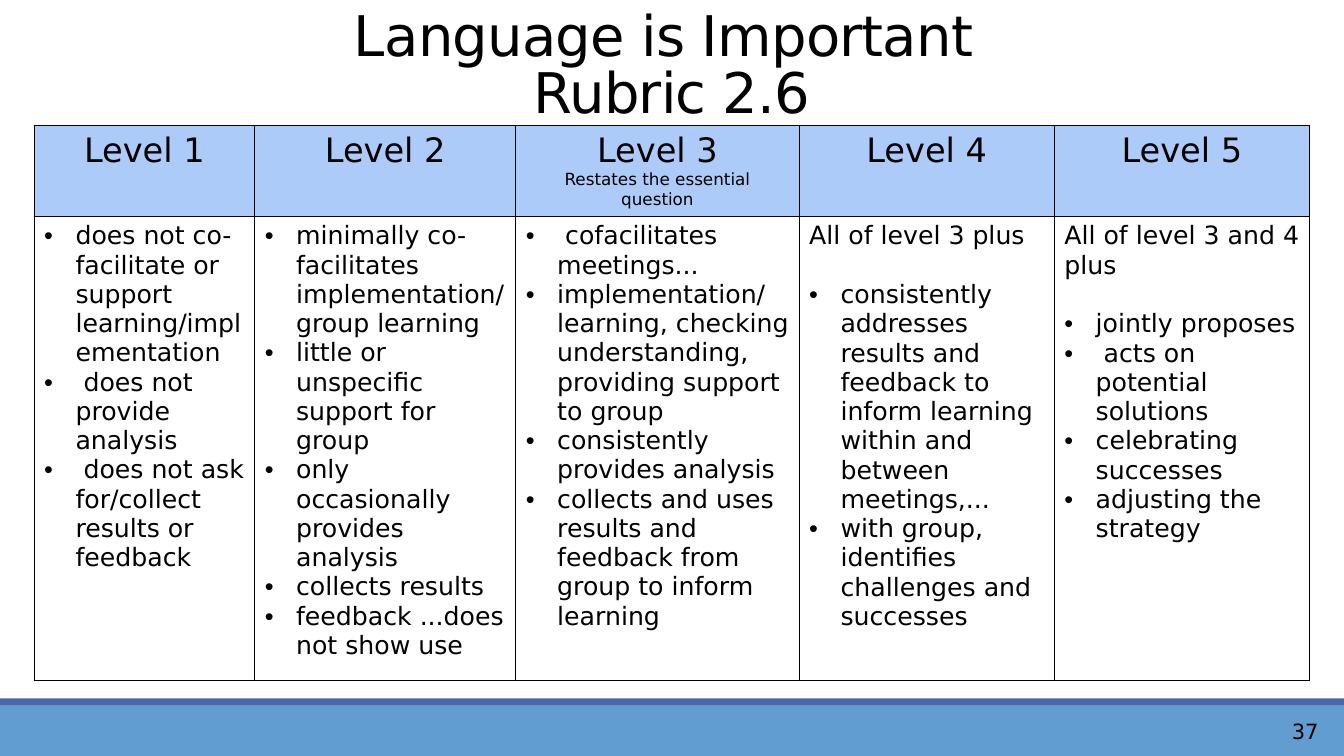
from lxml.etree import SubElement
from pptx import Presentation
from pptx.dml.color import RGBColor
from pptx.enum.shapes import MSO_SHAPE as Shape
from pptx.enum.text import MSO_ANCHOR as Anchor, MSO_AUTO_SIZE as AutoSize, PP_ALIGN as Align
from pptx.oxml.ns import qn
from pptx.util import Cm, Pt

FONT = "DejaVu Sans"
BLACK, HEADER_BLUE, SKY, NAVY = "000000", "ACCBF9", "629DD1", "4A66AC"
SLIDE_W, SLIDE_H = 33.87, 19.05
COLUMN_WIDTHS = [5.56, 6.58, 7.14, 6.43, 6.43]
ROW_HEIGHTS = [2.24, 11.3]

# Each level: heading, subheading, lead-in, bullet points
LEVELS = [
    ("Level 1", "", "", [
        "does not co-facilitate or support learning/implementation",
        " does not provide analysis",
        " does not ask for/collect results or feedback"]),
    ("Level 2", "", "", [
        "minimally co-facilitates implementation/group learning",
        "little or unspecific support for group",
        "only occasionally provides analysis",
        "collects results",
        "feedback ...does not show use"]),
    ("Level 3", "Restates the essential question", "", [
        " cofacilitates meetings...",
        "implementation/learning, checking understanding, providing support to group",
        "consistently provides analysis",
        "collects and uses results and feedback from group to inform learning"]),
    ("Level 4", "", "All of level 3 plus", [
        "consistently addresses results and feedback to inform learning "
        "within and between meetings,...",
        "with group, identifies challenges and successes"]),
    ("Level 5", "", "All of level 3 and 4 plus", [
        "jointly proposes",
        " acts on potential solutions",
        "celebrating successes",
        "adjusting the strategy"]),
]


def color(hex_code):
    return RGBColor.from_string(hex_code)


def write(frame, text, size=18, align=Align.LEFT, bullet=False, after=0,
          line=None, tracking=None):
    """Fill the frame's first paragraph, or add one if it is already used."""
    paragraph = frame.paragraphs[0]
    if paragraph.runs:
        paragraph = frame.add_paragraph()
    paragraph.text = text
    paragraph.alignment = align
    paragraph.space_before, paragraph.space_after = Pt(0), Pt(after)
    if line:
        paragraph.line_spacing = line
    for run in paragraph.runs:
        font = run.font
        font.name, font.size, font.bold = FONT, Pt(size), False
        font.color.rgb = color(BLACK)
        if tracking is not None:
            run._r.get_or_add_rPr().set("spc", str(round(tracking * 100)))
    for line_break in paragraph._p.findall(qn("a:br")):
        SubElement(line_break, qn("a:rPr"), sz=str(size * 100))
    if bullet:
        props = paragraph._p.get_or_add_pPr()
        props.set("marL", str(Cm(0.79)))
        props.set("indent", str(-Cm(0.79)))
        SubElement(props, qn("a:buFont"), typeface="Arial")
        SubElement(props, qn("a:buChar"), char="•")


def outline_cell(cell):
    props = cell._tc.get_or_add_tcPr()
    for index, side in enumerate(("lnL", "lnR", "lnT", "lnB")):
        border = props.makeelement(qn(f"a:{side}"), {"w": str(Pt(1))})
        props.insert(index, border)
        fill = SubElement(border, qn("a:solidFill"))
        SubElement(fill, qn("a:srgbClr"), val=BLACK)


def add_bar(slide, left, top, width, height, fill):
    bar = slide.shapes.add_shape(Shape.RECTANGLE, Cm(left), Cm(top), Cm(width), Cm(height))
    bar.shadow.inherit = False
    bar.fill.solid()
    bar.fill.fore_color.rgb = color(fill)
    bar.line.fill.background()


def add_footer(slide, left, top, width, height):
    stripe = 0.18
    add_bar(slide, left, top + stripe, width, height - stripe, SKY)
    add_bar(slide, left, top, width, stripe, NAVY)
    # Slide number
    number = slide.shapes.add_textbox(Cm(left + width - 2.22), Cm(top + 0.26),
                                      Cm(1.83), Cm(1.12)).text_frame
    number.word_wrap = True
    number.vertical_anchor = Anchor.MIDDLE
    write(number, "37", size=15, align=Align.RIGHT)


def add_title(slide, left, top, width, height):
    title = slide.shapes.title
    title.left, title.top, title.width, title.height = map(Cm, (left, top, width, height))
    frame = title.text_frame
    frame.word_wrap = True
    frame.auto_size = AutoSize.NONE
    frame.vertical_anchor = Anchor.BOTTOM
    write(frame, "Language is Important \vRubric 2.6", size=40, align=Align.CENTER,
          line=0.85, tracking=-0.5)


def add_rubric(slide, left, top):
    rubric = slide.shapes.add_table(len(ROW_HEIGHTS), len(LEVELS), Cm(left), Cm(top),
                                    Cm(sum(COLUMN_WIDTHS)), Cm(sum(ROW_HEIGHTS))).table
    rubric.first_row = rubric.horz_banding = False
    for row, height in zip(rubric.rows, ROW_HEIGHTS):
        row.height = Cm(height)
    for index, (heading, subheading, lead_in, points) in enumerate(LEVELS):
        rubric.columns[index].width = Cm(COLUMN_WIDTHS[index])
        header, body = rubric.cell(0, index), rubric.cell(1, index)
        # Level heading
        header.fill.solid()
        header.fill.fore_color.rgb = color(HEADER_BLUE)
        write(header.text_frame, heading, size=24, align=Align.CENTER)
        if subheading:
            write(header.text_frame, subheading, size=12, align=Align.CENTER)
        # Level description
        body.fill.background()
        if lead_in:
            write(body.text_frame, lead_in, after=21)
        for point in points:
            write(body.text_frame, point, bullet=True)
        outline_cell(header)
        outline_cell(body)


def main():
    deck = Presentation()
    deck.slide_width, deck.slide_height = Cm(SLIDE_W), Cm(SLIDE_H)
    slide = deck.slides.add_slide(deck.slide_layouts[5])
    add_footer(slide, 0, 17.6, SLIDE_W, SLIDE_H - 17.6)
    add_title(slide, 2.97, -0.43, 27.94, 3.71)
    add_rubric(slide, 0.86, 3.17)
    deck.save("out.pptx")


if __name__ == "__main__":
    main()
